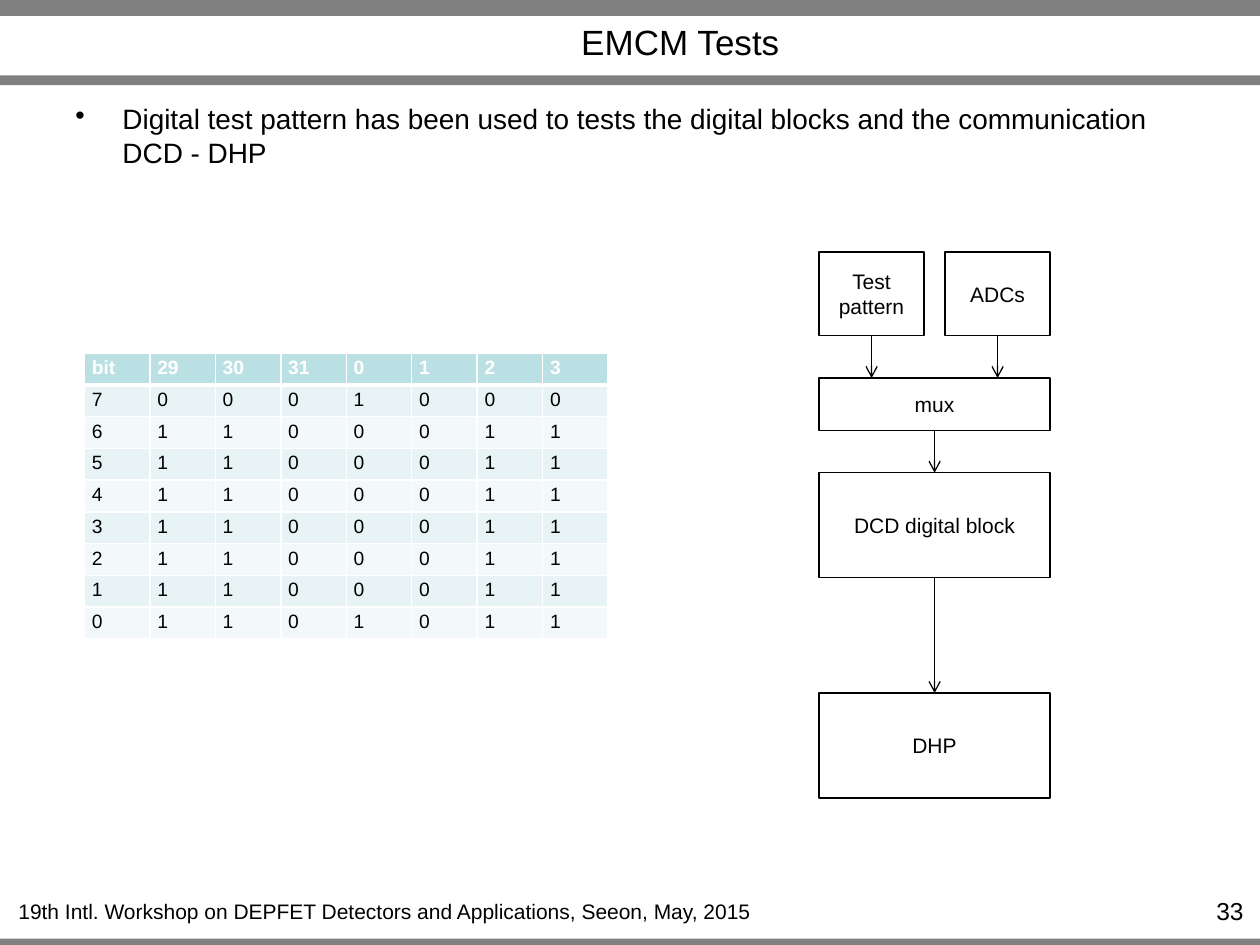
import pptx
import pptx.dml.color
import pptx.enum.shapes
import pptx.enum.text
import pptx.oxml
import pptx.oxml.ns
import pptx.util

Cm, Pt = pptx.util.Cm, pptx.util.Pt
ALIGN = pptx.enum.text.PP_ALIGN
ANCHOR = pptx.enum.text.MSO_ANCHOR
SHAPE = pptx.enum.shapes.MSO_SHAPE
CONNECTOR = pptx.enum.shapes.MSO_CONNECTOR

COLORS = {
    "black": "000000",
    "white": "FFFFFF",
    "bar": "808080",
    "header": "BBE0E3",
    "odd": "E7F3F4",
    "even": "F3F9FA",
}


def rgb(name):
    return pptx.dml.color.RGBColor.from_string(COLORS[name])


def element(tag, attrs="", inner=""):
    ns = pptx.oxml.ns.nsdecls("a")
    return pptx.oxml.parse_xml(f"<a:{tag} {ns} {attrs}>{inner}</a:{tag}>")


class SlideBuilder:
    font = "Arial"
    line_width = Pt(0.75)

    def __init__(self, prs):
        self.slide = prs.slides.add_slide(prs.slide_layouts[6])
        self.shapes = self.slide.shapes

    def add_text(self, tf, text, size, align, color="black", bold=False):
        p = tf.paragraphs[0]
        p.alignment = align
        r = p.add_run()
        r.text = text
        fmt = {"name": self.font, "size": Pt(size), "bold": bold}
        for key, value in fmt.items():
            setattr(r.font, key, value)
        r.font.color.rgb = rgb(color)
        return p

    def bar(self, top, height):
        sp = self.shapes.add_shape(SHAPE.RECTANGLE, 0, Cm(top), Cm(25.4), Cm(height))
        sp.shadow.inherit = False
        sp.fill.solid()
        sp.fill.fore_color.rgb = rgb("bar")
        sp.line.fill.background()

    def text(self, box, text, size, align=ALIGN.LEFT, anchor=ANCHOR.TOP, wrap=True):
        tf = self.shapes.add_textbox(*map(Cm, box)).text_frame
        tf.word_wrap = wrap
        tf.vertical_anchor = anchor
        return self.add_text(tf, text, size, align)

    def bullet(self, box, text, size):
        pPr = self.text(box, text, size)._p.get_or_add_pPr()
        pPr.set("marL", str(Cm(0.95)))
        pPr.set("indent", str(-Cm(0.95)))
        pPr.append(element("buChar", 'char="•"'))

    def table(self, left, top, col_width, row_height, rows):
        n_rows, n_cols = len(rows), len(rows[0])
        frame = self.shapes.add_table(n_rows, n_cols, Cm(left), Cm(top),
                                      Cm(col_width * n_cols), Cm(row_height * n_rows))
        table = frame.table
        table.horz_banding = False
        for col in table.columns:
            col.width = Cm(col_width)
        for i, values in enumerate(rows):
            table.rows[i].height = Cm(row_height)
            for j, value in enumerate(values):
                self.cell(table.cell(i, j), value, i)

    def cell(self, cell, value, row):
        head = row == 0
        fmt = {"margin_left": Cm(0.15), "margin_right": Cm(0.15),
               "margin_top": Cm(0.08), "margin_bottom": Cm(0.08)}
        for key, margin in fmt.items():
            setattr(cell, key, margin)
        self.add_text(cell.text_frame, value, 11, ALIGN.LEFT,
                      "white" if head else "black", head)
        # Thick rule between the header and the first data row
        widths = {"lnL": 1, "lnR": 1, "lnT": 3 if row == 1 else 1, "lnB": 3 if head else 1}
        white = f'<a:solidFill><a:srgbClr val="{COLORS["white"]}"/></a:solidFill>'
        for tag, width in widths.items():
            cell._tc.get_or_add_tcPr().append(element(tag, f'w="{Pt(width)}"', white))
        cell.fill.solid()
        cell.fill.fore_color.rgb = rgb("header" if head else "odd" if row % 2 else "even")

    def block(self, box, text):
        sp = self.shapes.add_shape(SHAPE.RECTANGLE, *map(Cm, box))
        sp.shadow.inherit = False
        sp.fill.background()
        sp.line.color.rgb = rgb("black")
        sp.line.width = self.line_width
        sp.text_frame.word_wrap = True
        sp.text_frame.vertical_anchor = ANCHOR.MIDDLE
        self.add_text(sp.text_frame, text, 12, ALIGN.CENTER)

    def arrow(self, x, top, bottom):
        cxn = self.shapes.add_connector(CONNECTOR.STRAIGHT, Cm(x), Cm(top), Cm(x), Cm(bottom))
        cxn.line.color.rgb = rgb("black")
        cxn.line.width = self.line_width
        spPr = cxn._element.spPr
        spPr.find(pptx.oxml.ns.qn("a:ln")).append(element("tailEnd", 'type="arrow"'))
        spPr.append(element("effectLst"))


def main():
    prs = pptx.Presentation()
    prs.slide_width, prs.slide_height = Cm(25.4), Cm(19.05)
    s = SlideBuilder(prs)

    # Frame bars and footer
    for top, height in [(18.92, 0.2), (0, 0.32), (1.52, 0.2)]:
        s.bar(top, height)
    s.text((0.05, 17.98, 15.42, 0.76),
           "19th Intl. Workshop on DEPFET Detectors and Applications, Seeon, May, 2015",
           12, ALIGN.CENTER, wrap=False)
    s.text((23.11, 17.93, 2.21, 0.61), "33", 14, ALIGN.RIGHT)

    # Title and statement
    s.text((3.3, 0.36, 20.83, 0.97), "EMCM Tests", 20, ALIGN.CENTER, ANCHOR.MIDDLE)
    s.bullet((1.27, 1.93, 22.86, 2.74),
             "Digital test pattern has been used to tests the digital blocks "
             "and the communication DCD - DHP", 16)

    # Bit pattern: bits 6 to 1 share the same values
    rows = [["bit", "29", "30", "31", "0", "1", "2", "3"], ["7", *"0001000"]]
    rows += [[str(bit), *"1100011"] for bit in range(6, 0, -1)]
    rows.append(["0", *"1101011"])
    s.table(1.7, 7.12, 1.32, 0.64, rows)

    # Data path: two sources above a column of wide blocks
    left, wide, narrow, source_top, source_height = 16.51, 4.66, 2.12, 5.08, 1.69
    blocks = [("mux", 7.62, 1.06), ("DCD digital block", 9.53, 2.12), ("DHP", 13.97, 2.12)]
    for x, name in [(left, "Test pattern"), (left + wide - narrow, "ADCs")]:
        s.block((x, source_top, narrow, source_height), name)
        s.arrow(x + narrow / 2, source_top + source_height, blocks[0][1])
    for name, top, height in blocks:
        s.block((left, top, wide, height), name)
    for (_, top, height), (_, next_top, _) in zip(blocks, blocks[1:]):
        s.arrow(left + wide / 2, top + height, next_top)

    prs.save("out.pptx")


if __name__ == "__main__":
    main()
